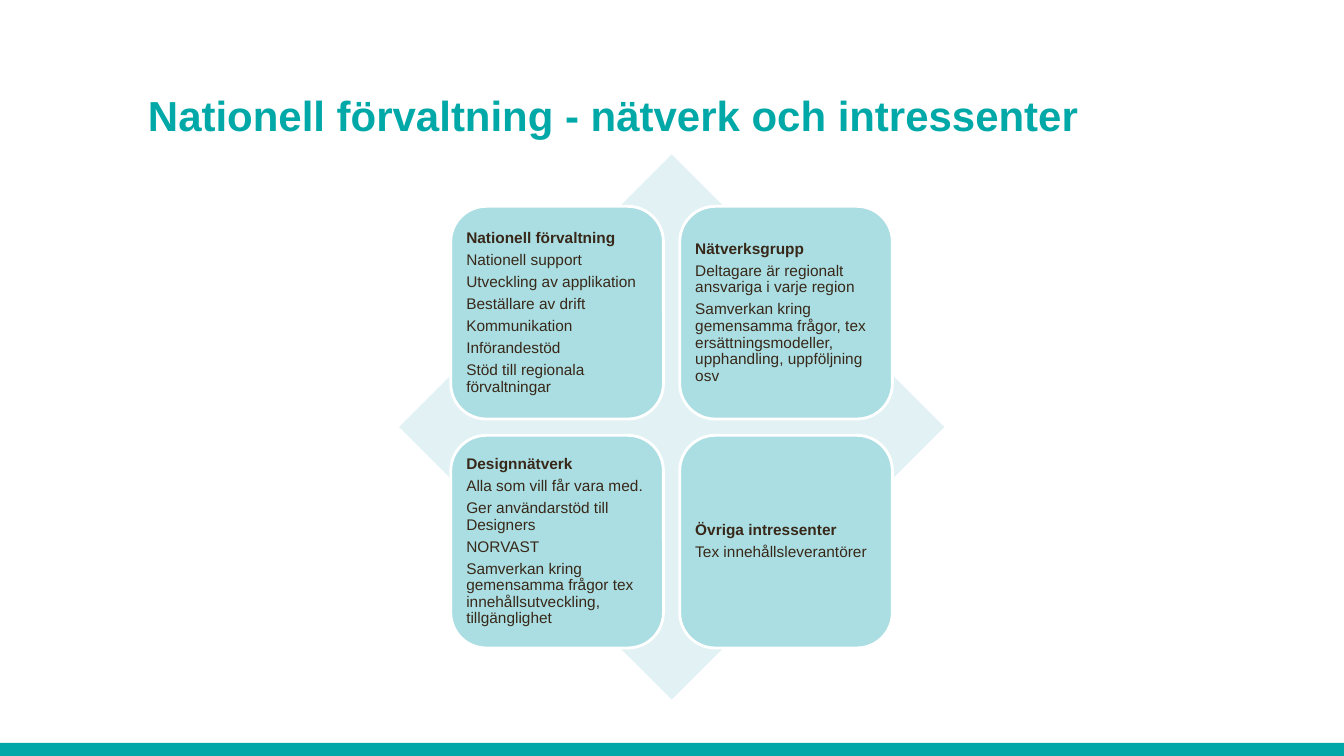
"""Build the slide on networks and stakeholders of the national administration."""
from dataclasses import dataclass
from typing import Any

from pptx import Presentation
from pptx.dml.color import RGBColor
from pptx.enum.shapes import MSO_SHAPE
from pptx.enum.text import MSO_ANCHOR, PP_ALIGN
from pptx.slide import Slide
from pptx.text.text import TextFrame
from pptx.util import Cm, Pt

TEAL, PALE, AQUA, BROWN, WHITE = "00A9A7", "E2F2F4", "AADEE2", "382819", "FFFFFF"
WIDTH, HEIGHT = 33.87, 19.05
SIDE, PITCH, LEFT, TOP = 5.36, 5.77, 11.36, 5.2
SIDES = ("margin_left", "margin_top", "margin_right", "margin_bottom")
TITLE_FRAME = {"word_wrap": True, "vertical_anchor": MSO_ANCHOR.BOTTOM,
               **dict.fromkeys(SIDES, Cm(0))}
TILE_FRAME = {"word_wrap": True, "vertical_anchor": MSO_ANCHOR.MIDDLE,
              **dict.fromkeys(SIDES, Cm(0.13))}
TITLE_PARA = {"alignment": PP_ALIGN.LEFT}
TILE_PARA = {"alignment": PP_ALIGN.LEFT, "line_spacing": 0.9, "space_after": Pt(3.85)}
TITLE_FONT = {"name": "Arial", "size": Pt(30)}
TILE_FONT = {"name": "Arial", "size": Pt(11)}


@dataclass
class Box:
    """Position and size in centimetres."""
    left: float
    top: float
    width: float
    height: float

    def cm(self) -> tuple[Cm, Cm, Cm, Cm]:
        """Return the box as lengths."""
        return Cm(self.left), Cm(self.top), Cm(self.width), Cm(self.height)


@dataclass
class Tile:
    """Group of stakeholders with its place in the grid."""
    col: int
    row: int
    head: str
    items: list[str]


TILES = [
    Tile(0, 0, "Nationell förvaltning", [
        "Nationell support", "Utveckling av applikation", "Beställare av drift",
        "Kommunikation", "Införandestöd", "Stöd till regionala förvaltningar"]),
    Tile(1, 0, "Nätverksgrupp", [
        "Deltagare är regionalt ansvariga i varje region",
        "Samverkan kring gemensamma frågor, tex ersättningsmodeller, "
        "upphandling, uppföljning osv"]),
    Tile(0, 1, "Designnätverk", [
        "Alla som vill får vara med.", "Ger användarstöd till Designers", "NORVAST",
        "Samverkan kring gemensamma frågor tex innehållsutveckling, tillgänglighet"]),
    Tile(1, 1, "Övriga intressenter", ["Tex innehållsleverantörer"]),
]


def tint(code: str) -> RGBColor:
    """Turn a hex string into a colour."""
    return RGBColor.from_string(code)


def style(item: Any, values: dict[str, Any]) -> None:
    """Set each format value on the item."""
    for name, value in values.items():
        setattr(item, name, value)


def draw(slide: Slide, kind: MSO_SHAPE, box: Box, fill: str, edge: str = "") -> TextFrame:
    """Draw a filled shape and return its text frame."""
    shape = slide.shapes.add_shape(kind, *box.cm())
    shape.shadow.inherit = False
    shape.fill.solid()
    shape.fill.fore_color.rgb = tint(fill)
    if edge:
        shape.line.color.rgb = tint(edge)
        shape.line.width = Pt(2)
    else:
        shape.line.fill.background()
    return shape.text_frame


def write(frame: TextFrame, lines: list[str], color: str, layout: dict[str, Any],
          para: dict[str, Any], font: dict[str, Any]) -> None:
    """Write the lines with the first one in bold."""
    style(frame, layout)
    for index, line in enumerate(lines):
        part = frame.add_paragraph() if index else frame.paragraphs[0]
        style(part, para)
        run = part.add_run()
        run.text = line
        style(run.font, {**font, "bold": index == 0})
        run.font.color.rgb = tint(color)


def main() -> None:
    """Build and save the slide."""
    deck = Presentation()
    deck.slide_width, deck.slide_height = Cm(WIDTH), Cm(HEIGHT)
    slide = deck.slides.add_slide(deck.slide_layouts[6])
    draw(slide, MSO_SHAPE.RECTANGLE, Box(0, 18.72, WIDTH, 0.33), TEAL)
    title = slide.shapes.add_textbox(*Box(3.73, 0.93, 26.39, 2.59).cm())
    write(title.text_frame, ["Nationell förvaltning - nätverk och intressenter"],
          TEAL, TITLE_FRAME, TITLE_PARA, TITLE_FONT)
    draw(slide, MSO_SHAPE.DIAMOND, Box(10.06, 3.89, 13.74, 13.74), PALE)
    for tile in TILES:
        box = Box(LEFT + tile.col * PITCH, TOP + tile.row * PITCH, SIDE, SIDE)
        frame = draw(slide, MSO_SHAPE.ROUNDED_RECTANGLE, box, AQUA, WHITE)
        write(frame, [tile.head, *tile.items], BROWN, TILE_FRAME, TILE_PARA, TILE_FONT)
    deck.save("out.pptx")


if __name__ == "__main__":
    main()
